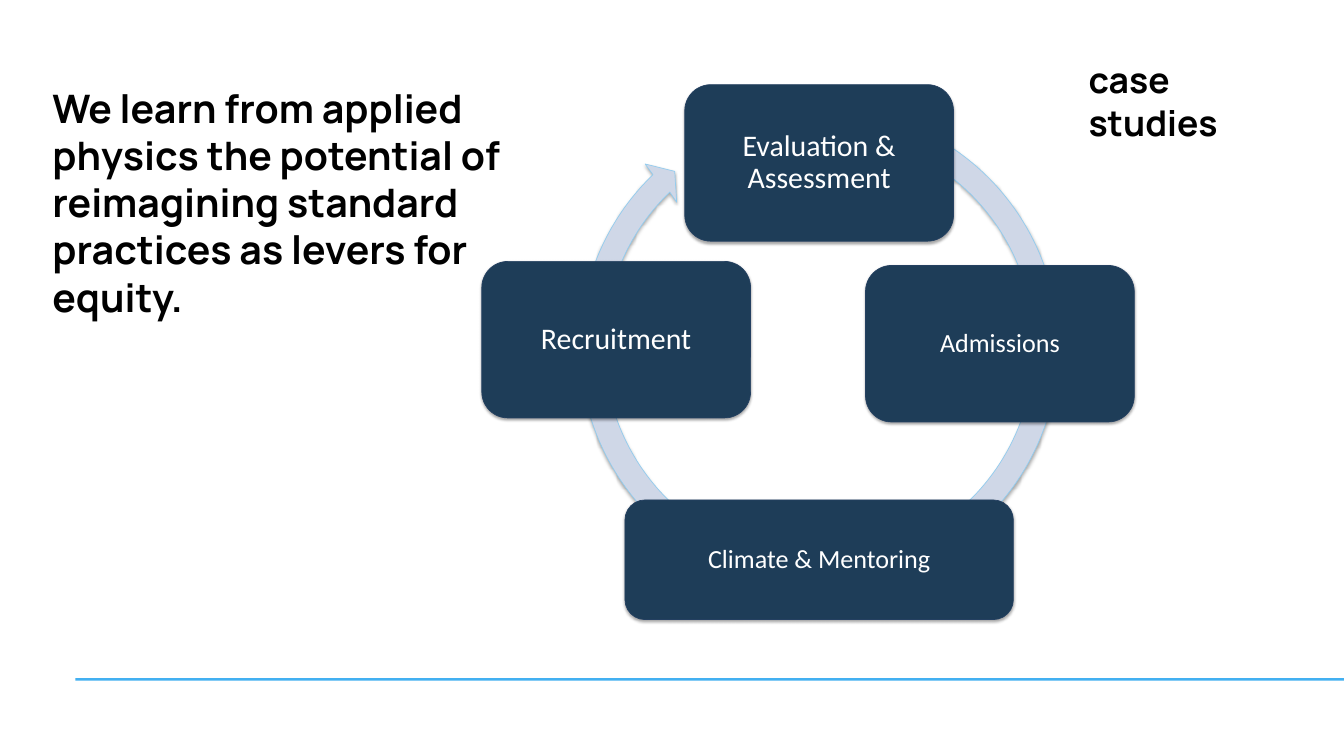
import math

from lxml import etree
from pptx import Presentation
from pptx.dml.color import RGBColor
from pptx.enum.shapes import MSO_SHAPE
from pptx.enum.text import MSO_ANCHOR, PP_ALIGN
from pptx.oxml import parse_xml
from pptx.oxml.ns import nsdecls, qn
from pptx.util import Inches, Pt

RECTANGLE = MSO_SHAPE.RECTANGLE
ROUNDED = MSO_SHAPE.ROUNDED_RECTANGLE
TOP, MIDDLE = MSO_ANCHOR.TOP, MSO_ANCHOR.MIDDLE
LEFT, CENTER = PP_ALIGN.LEFT, PP_ALIGN.CENTER

BLACK = RGBColor(0x00, 0x00, 0x00)
WHITE = RGBColor(0xFF, 0xFF, 0xFF)
NAVY = RGBColor(0x1E, 0x3D, 0x58)
NAVY_EDGE = RGBColor(0x24, 0x40, 0x61)
RING = RGBColor(0xCF, 0xD7, 0xE7)
RING_EDGE = RGBColor(0x92, 0xCC, 0xEF)
SKY = RGBColor(0x43, 0xB0, 0xF1)

HEADING_FONT, BODY_FONT = "Manrope", "Calibri"

# Square grid: 20 columns by 11.25 rows
COLUMNS, ROWS = 20, 11.25
SLIDE_WIDTH = Inches(20)
CELL = SLIDE_WIDTH / COLUMNS

# The cycle runs around one centre column
CENTER_X, CENTER_Y = 12.19, 5.16
OUTER_RADIUS, INNER_RADIUS = 3.56, 3.2
START_ANGLE, END_ANGLE = -67.4, 226
ARC_CURVES = 4
ARROWHEAD = [(9.6, 2.44), (10.04, 2.55), (10.07, 3.01)]
BOX_WIDTH, BOX_HEIGHT = 4, 2.33

# Stage, centre column, top row, width, height, text size
STAGES = [
    ("Evaluation & Assessment", CENTER_X, 1.26, BOX_WIDTH, BOX_HEIGHT, 32),
    ("Admissions", 14.88, 3.95, BOX_WIDTH, BOX_HEIGHT, 28),
    ("Climate & Mentoring", CENTER_X, 7.44, 5.78, 1.78, 28),
    ("Recruitment", 9.17, 3.89, BOX_WIDTH, BOX_HEIGHT, 32),
]


def grid(*cells):
    return [round(cell * CELL) for cell in cells]


def write_text(shape, text, *, size, font, color, bold=False, align=LEFT,
               anchor=TOP, insets=(0, 0), line_spacing=None):
    frame = shape.text_frame
    frame.word_wrap = True
    frame.vertical_anchor = anchor
    frame.margin_left = frame.margin_right = Inches(insets[0])
    frame.margin_top = frame.margin_bottom = Inches(insets[1])
    paragraph = frame.paragraphs[0]
    paragraph.text = text
    paragraph.alignment = align
    paragraph.line_spacing = line_spacing
    paragraph.font.size = Pt(size)
    paragraph.font.name = font
    paragraph.font.bold = bold
    paragraph.font.color.rgb = color


def paint(shape, fill, edge=None):
    shape.shadow.inherit = False
    shape.fill.solid()
    shape.fill.fore_color.rgb = fill
    if edge is None:
        shape.line.fill.background()
    else:
        shape.line.color.rgb = edge
        shape.line.width = Pt(0.75)


def add_soft_shadow(shape):
    effects = shape.shadow._element.find(".//{*}effectLst")
    effects.append(parse_xml(
        f'<a:outerShdw {nsdecls("a")} blurRad="{Pt(3.1)}" dist="{Pt(1.8)}" '
        'dir="5400000" rotWithShape="0"><a:srgbClr val="000000">'
        '<a:alpha val="35000"/></a:srgbClr></a:outerShdw>'))


def add_heading(slide, text, area, size, insets=(0, 0)):
    box = slide.shapes.add_textbox(*grid(*area))
    write_text(box, text, size=size, font=HEADING_FONT, color=BLACK,
               bold=True, insets=insets)


def arc_points(radius):
    """Anchors of the arc with two Bezier handles between neighbours."""
    step = math.radians(END_ANGLE - START_ANGLE) / ARC_CURVES
    handle = 4 / 3 * math.tan(step / 4)
    points = []
    for index in range(ARC_CURVES + 1):
        angle = math.radians(START_ANGLE) + index * step
        cosine, sine = math.cos(angle), math.sin(angle)
        for pull in (-handle, 0, handle):
            points.append((CENTER_X + radius * (cosine - pull * sine),
                           CENTER_Y + radius * (sine + pull * cosine)))
    return points[1:-1]


def bend_lines(shape, first):
    """Turn each three lines of one arc into a cubic curve."""
    outline = shape.shadow._element.find(".//{*}path")
    lines = outline.findall(qn("a:lnTo"))[first:first + 3 * ARC_CURVES]
    for start in range(0, len(lines), 3):
        curve = etree.Element(qn("a:cubicBezTo"))
        lines[start].addprevious(curve)
        for line in lines[start:start + 3]:
            curve.append(line[0])
            outline.remove(line)


def add_cycle_arrow(slide):
    outer, inner = arc_points(OUTER_RADIUS), arc_points(INNER_RADIUS)
    points = outer + ARROWHEAD + inner[::-1]
    outline = [tuple(grid(*point)) for point in points]
    builder = slide.shapes.build_freeform(*outline[0])
    builder.add_line_segments(outline[1:], close=True)
    arrow = builder.convert_to_shape()
    # The inner arc goes first, so the line count before it still holds
    bend_lines(arrow, len(outer) + len(ARROWHEAD))
    bend_lines(arrow, 0)
    paint(arrow, RING, RING_EDGE)
    add_soft_shadow(arrow)


def add_stage(slide, text, center, top, width, height, size):
    box = slide.shapes.add_shape(
        ROUNDED, *grid(center - width / 2, top, width, height))
    paint(box, NAVY, NAVY_EDGE)
    add_soft_shadow(box)
    write_text(box, text, size=size, font=BODY_FONT, color=WHITE,
               align=CENTER, anchor=MIDDLE, insets=(0.12, 0.12),
               line_spacing=0.9)


def add_footer_rule(slide, left, top, height):
    rule = slide.shapes.add_shape(
        RECTANGLE, *grid(left, top, COLUMNS - left, height))
    paint(rule, SKY)


def main():
    presentation = Presentation()
    presentation.slide_width = SLIDE_WIDTH
    presentation.slide_height = round(ROWS * CELL)
    slide = presentation.slides.add_slide(presentation.slide_layouts[6])

    # Message and footer rule
    add_heading(slide, "We learn from applied physics the potential of "
                "reimagining standard practices as levers for equity.",
                (0.78, 1.26, 7.35, 3.54), 42)
    add_footer_rule(slide, 1.12, 10.09, 0.04)

    # Corner label
    add_heading(slide, "case studies", (16.1, 0.82, 3.16, 0.74), 38,
                insets=(0.1, 0.05))

    # Cycle of stages
    add_cycle_arrow(slide)
    for stage in STAGES:
        add_stage(slide, *stage)

    presentation.save("out.pptx")


if __name__ == "__main__":
    main()
